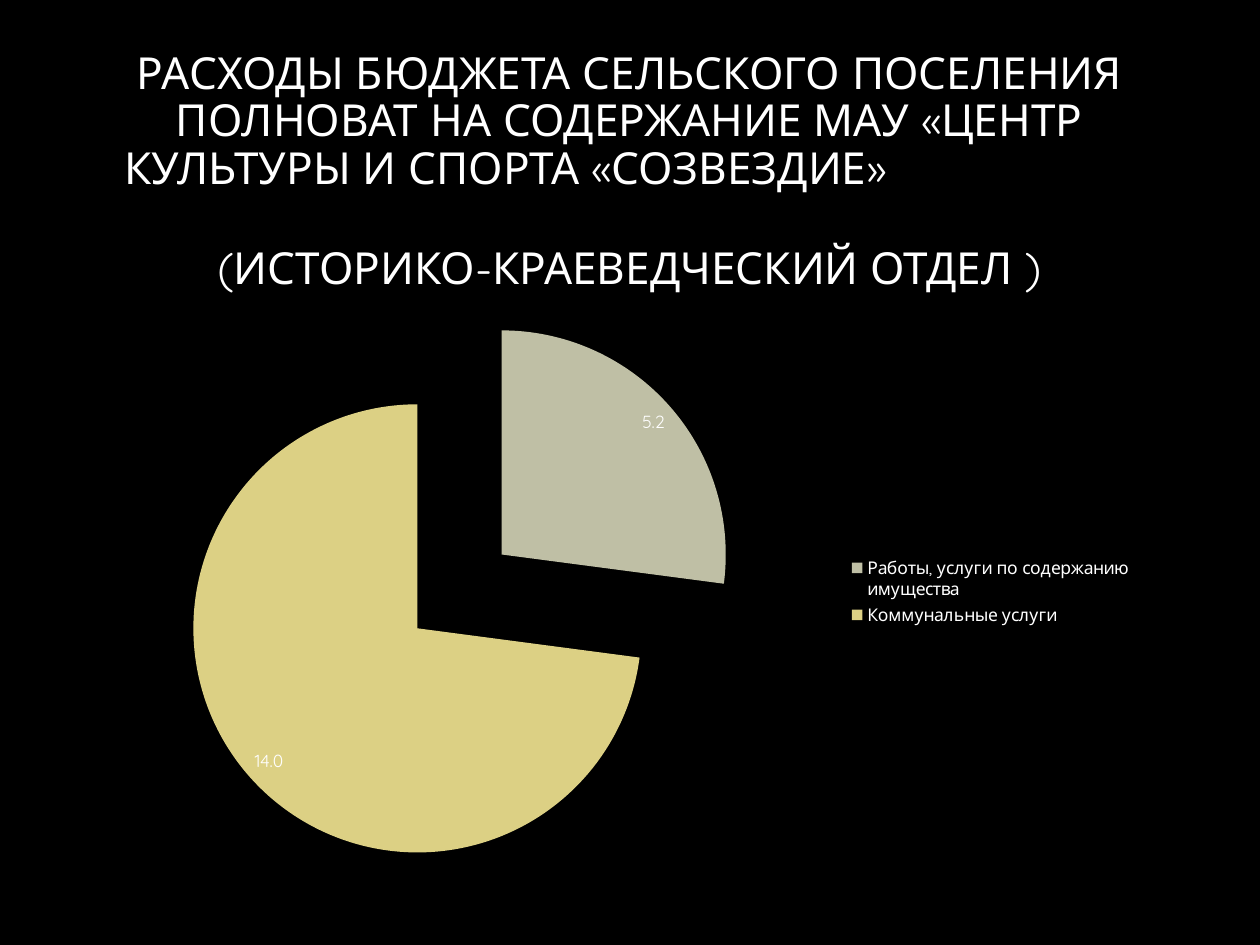
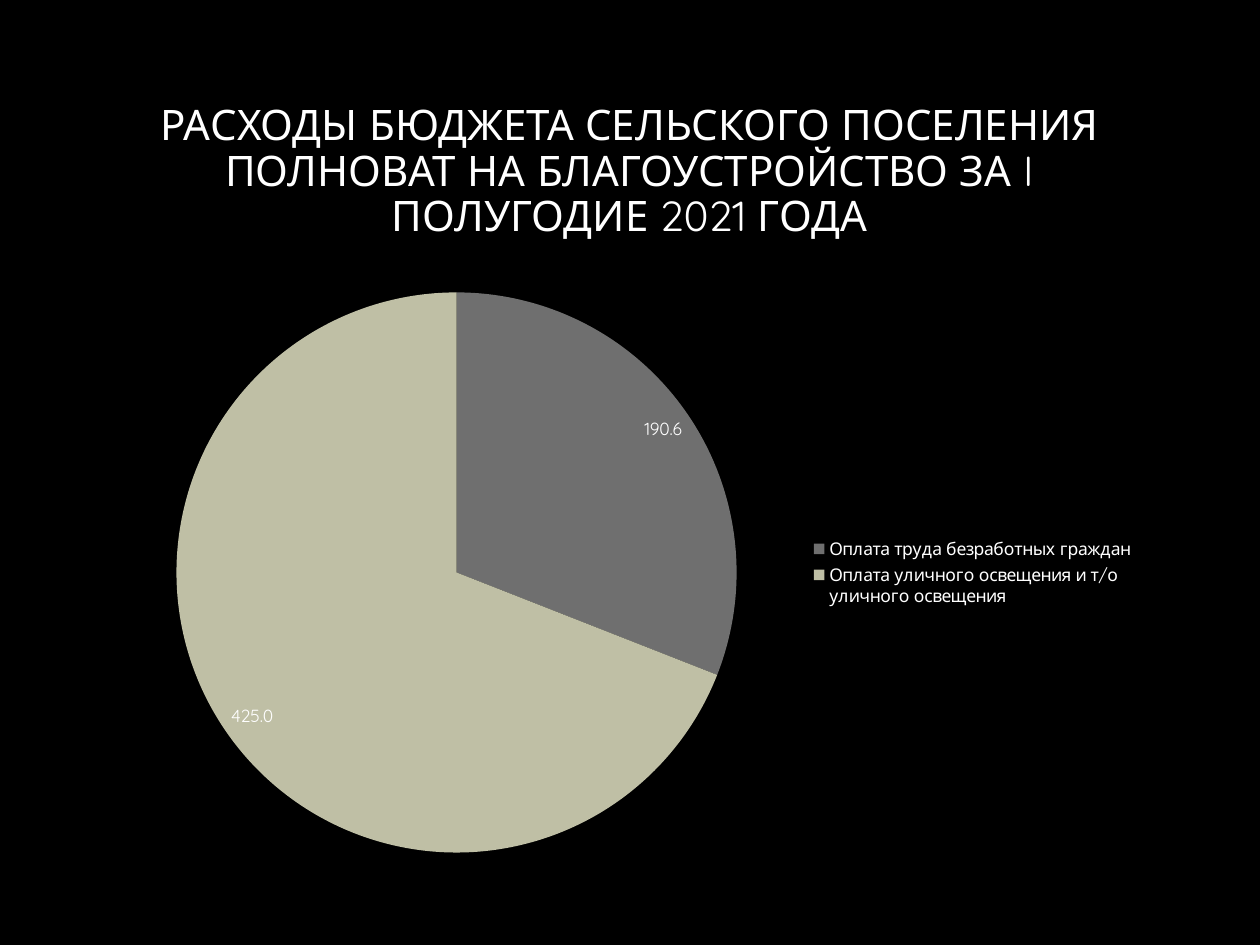
from pptx import Presentation
from pptx.chart.data import CategoryChartData
from pptx.dml.color import RGBColor
from pptx.enum.chart import XL_CHART_TYPE as ChartType
from pptx.enum.chart import XL_LABEL_POSITION as LabelPosition
from pptx.enum.chart import XL_LEGEND_POSITION as LegendPosition
from pptx.enum.text import MSO_ANCHOR as Anchor
from pptx.enum.text import PP_ALIGN as Align
from pptx.oxml import parse_xml
from pptx.oxml.ns import nsdecls, qn
from pptx.util import Emu, Pt

COLORS = {
    "background": "000000",
    "text": "FFFFFF",
    "gray": "6F6F6F",
    "sage": "BFBFA5",
    "sand": "DCD084",
}
SLICE_COLORS = ("gray", "sage", "sand")
FONT = "Quicksand"
TITLE_BOX = (112, 82, 1035, 181)


def px(length):
    """Turn a length in pixels into EMU."""
    return Emu(round(length * 914400 / 126))


def color(name):
    """Look up a named colour."""
    return RGBColor.from_string(COLORS[name])


def style_font(font, size):
    """Apply the shared typeface and text colour."""
    font.name = FONT
    font.size = Pt(size)
    font.color.rgb = color("text")


def add_slide(presentation):
    """Add a blank slide with the shared background."""
    slide = presentation.slides.add_slide(presentation.slide_layouts[6])
    slide.background.fill.solid()
    slide.background.fill.fore_color.rgb = color("background")
    return slide


def add_paragraph(paragraph, text, size=24, align=Align.CENTER, before=0):
    """Fill one title paragraph."""
    paragraph.alignment = align
    paragraph.line_spacing = 0.9
    paragraph.space_before = Pt(before)
    run = paragraph.add_run()
    run.text = text
    style_font(run.font, size)


def add_title(slide, parts, size):
    """Add the title from pairs of text and paragraph format."""
    frame = slide.shapes.add_textbox(*map(px, TITLE_BOX)).text_frame
    frame.word_wrap = True
    frame.vertical_anchor = Anchor.MIDDLE
    for index, (text, options) in enumerate(parts):
        paragraph = frame.add_paragraph() if index else frame.paragraphs[0]
        add_paragraph(paragraph, text, size=size, **options)


def explode_slices(chart, percent):
    """Pull all slices away from the centre."""
    explosion = parse_xml(f'<c:explosion {nsdecls("c")} val="{percent}"/>')
    chart.element.find(".//" + qn("c:ser")).find(qn("c:tx")).addnext(explosion)


def hide_legend_entry(chart, index):
    """Remove one entry from the legend."""
    entry = parse_xml(
        f'<c:legendEntry {nsdecls("c")}><c:idx val="{index}"/>'
        '<c:delete val="1"/></c:legendEntry>'
    )
    chart.element.find(".//" + qn("c:legendPos")).addnext(entry)


def add_pie(slide, box, values):
    """Add a pie chart with value labels and a legend on the right."""
    data = CategoryChartData()
    data.categories = list(values)
    data.add_series("Series 1", list(values.values()))
    chart = slide.shapes.add_chart(ChartType.PIE, *map(px, box), data).chart
    chart.has_title = False
    style_font(chart.font, 10)
    chart.has_legend = True
    chart.legend.position = LegendPosition.RIGHT
    chart.legend.include_in_layout = False

    plot = chart.plots[0]
    plot.vary_by_categories = True
    series = plot.series[0]
    for index in range(len(values)):
        point_format = series.points[index].format
        point_format.fill.solid()
        point_format.fill.fore_color.rgb = color(SLICE_COLORS[index])
        point_format.line.fill.background()
    labels = series.data_labels
    labels.show_value = True
    labels.number_format = "#,##0.0"
    labels.number_format_is_linked = False
    labels.position = LabelPosition.INSIDE_END
    style_font(labels.font, 10)
    return chart


def build_culture_slide(presentation):
    """Build the slide on the upkeep of the culture centre."""
    slide = add_slide(presentation)
    chart = add_pie(slide, (73, 294, 1072, 595), {
        "": None,
        "Работы, услуги по содержанию имущества": 5.2,
        "Коммунальные услуги": 14,
    })
    explode_slices(chart, 25)
    hide_legend_entry(chart, 0)
    add_title(slide, [
        ("РАСХОДЫ БЮДЖЕТА СЕЛЬСКОГО ПОСЕЛЕНИЯ ПОЛНОВАТ "
         "НА СОДЕРЖАНИЕ МАУ «ЦЕНТР", {}),
        ("КУЛЬТУРЫ И СПОРТА «СОЗВЕЗДИЕ»", {"align": Align.LEFT}),
        ("(ИСТОРИКО-КРАЕВЕДЧЕСКИЙ ОТДЕЛ )", {"before": 30}),
    ], 25.2)


def build_improvement_slide(presentation):
    """Build the slide on the improvement of public places."""
    slide = add_slide(presentation)
    add_pie(slide, (105, 275, 1042, 595), {
        "Оплата труда безработных граждан": 190.6,
        "Оплата уличного освещения и т/о уличного освещения": 425,
    })
    add_title(slide, [
        ("РАСХОДЫ БЮДЖЕТА СЕЛЬСКОГО ПОСЕЛЕНИЯ ПОЛНОВАТ "
         "НА БЛАГОУСТРОЙСТВО ЗА I ПОЛУГОДИЕ 2021 ГОДА", {}),
    ], 24)


def main():
    """Build and save the presentation."""
    presentation = Presentation()
    presentation.slide_width = px(1260)
    presentation.slide_height = px(945)
    build_culture_slide(presentation)
    build_improvement_slide(presentation)
    presentation.save("out.pptx")


if __name__ == "__main__":
    main()
